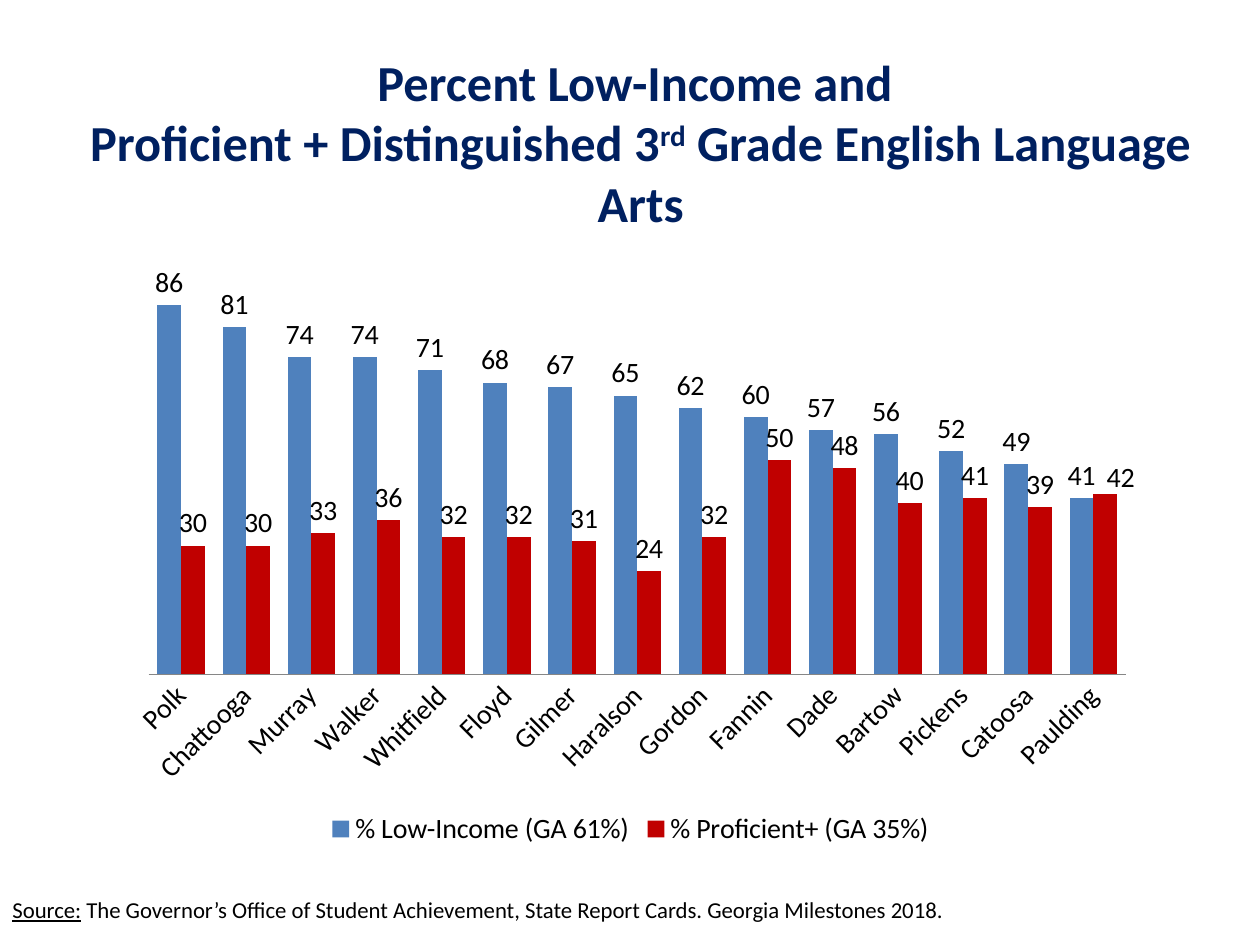
"""Build a slide charting low-income and reading proficiency rates by county."""
from lxml.etree import fromstring
from pptx import Presentation
from pptx.chart.data import CategoryChartData
from pptx.dml.color import RGBColor
from pptx.enum.chart import XL_CHART_TYPE, XL_LABEL_POSITION, XL_LEGEND_POSITION, XL_TICK_MARK
from pptx.enum.text import MSO_ANCHOR, MSO_AUTO_SIZE, PP_ALIGN
from pptx.util import Inches, Pt

COLORS = {"title": "002060", "text": "000000", "axis": "868686",
          "income": "4F81BD", "proficient": "C00000"}
FONT = "Calibri"
COUNTIES = ["Polk", "Chattooga", "Murray", "Walker", "Whitfield", "Floyd", "Gilmer", "Haralson",
            "Gordon", "Fannin", "Dade", "Bartow", "Pickens", "Catoosa", "Paulding"]
SERIES = [
    ("% Low-Income (GA 61%)", "income",
     [86, 81, 74, 74, 71, 68, 67, 65, 62, 60, 57, 56, 52, 49, 41]),
    ("% Proficient+ (GA 35%)", "proficient",
     [30, 30, 33, 36, 32, 32, 31, 24, 32, 50, 48, 40, 41, 39, 42]),
]
LABEL_SHIFT = (
    '<c:layout xmlns:c="http://schemas.openxmlformats.org/drawingml/2006/chart">'
    '<c:manualLayout><c:x val="0.015"/><c:y val="0.01"/></c:manualLayout></c:layout>'
)


def set_font(font, size, color="text", bold=False):
    font.name = FONT
    font.size = Pt(size)
    font.bold = bold
    font.color.rgb = RGBColor.from_string(COLORS[color])


prs = Presentation()
prs.slide_width, prs.slide_height = Inches(10), Inches(7.5)
s = prs.slides.add_slide(prs.slide_layouts[5])

title = s.shapes.title
title.left, title.top = Inches(0.32), Inches(0.4)
title.width, title.height = Inches(9.53), Inches(1.45)
tf = title.text_frame
tf.word_wrap = True
tf.auto_size = MSO_AUTO_SIZE.NONE
tf.vertical_anchor = MSO_ANCHOR.MIDDLE
p = tf.paragraphs[0]
p.alignment = PP_ALIGN.CENTER
set_font(p.font, 28.8, "title", True)
p.add_run().text = "Percent Low-Income and "
p.add_line_break()
p.add_run().text = "Proficient + Distinguished 3"
r = p.add_run()
r.text = "rd"
r.font._element.set("baseline", "30000")
p.add_run().text = " Grade English Language Arts"
for r in p.runs:
    r.font.size = Pt(28.8)

data = CategoryChartData(number_format="0")
data.categories = COUNTIES
for name, color, values in SERIES:
    data.add_series(name, values)
chart = s.shapes.add_chart(XL_CHART_TYPE.COLUMN_CLUSTERED, Inches(0.91), Inches(1.85),
                           Inches(8.19), Inches(4.91), data).chart
set_font(chart.font, 10)
chart.has_title = False
chart.has_legend = True
chart.legend.position = XL_LEGEND_POSITION.BOTTOM
chart.legend.include_in_layout = False
set_font(chart.legend.font, 16)

axis = chart.category_axis
axis.major_tick_mark = XL_TICK_MARK.NONE
axis.format.line.color.rgb = RGBColor.from_string(COLORS["axis"])
set_font(axis.tick_labels.font, 16)
axis = chart.value_axis
axis.visible = False
axis.has_major_gridlines = False
axis.minimum_scale, axis.maximum_scale = 0, 100

plot = chart.plots[0]
plot.gap_width = 75
plot.overlap = 0
plot.vary_by_categories = False
for series, (name, color, values) in zip(plot.series, SERIES):
    series.format.fill.solid()
    series.format.fill.fore_color.rgb = RGBColor.from_string(COLORS[color])
    labels = series.data_labels
    labels.show_value = True
    labels.number_format = "0"
    labels.number_format_is_linked = False
    labels.position = XL_LABEL_POSITION.OUTSIDE_END
    set_font(labels.font, 16)

label = plot.series[1].points[len(COUNTIES) - 1].data_label
label.position = XL_LABEL_POSITION.OUTSIDE_END
set_font(label.font, 16)
plot.series[1].data_labels._element.find("{*}dLbl").insert(1, fromstring(LABEL_SHIFT))

tf = s.shapes.add_textbox(Inches(0), Inches(7.14), Inches(8.75), Inches(0.25)).text_frame
tf.word_wrap = True
tf.auto_size = MSO_AUTO_SIZE.SHAPE_TO_FIT_TEXT
p = tf.paragraphs[0]
p.line_spacing = 0.6
set_font(p.font, 13)
r = p.add_run()
r.text = "Source:"
r.font.underline = True
p.add_run().text = (" The Governor’s Office of Student Achievement, State Report Cards. "
                    "Georgia Milestones 2018.")

prs.save("out.pptx")
